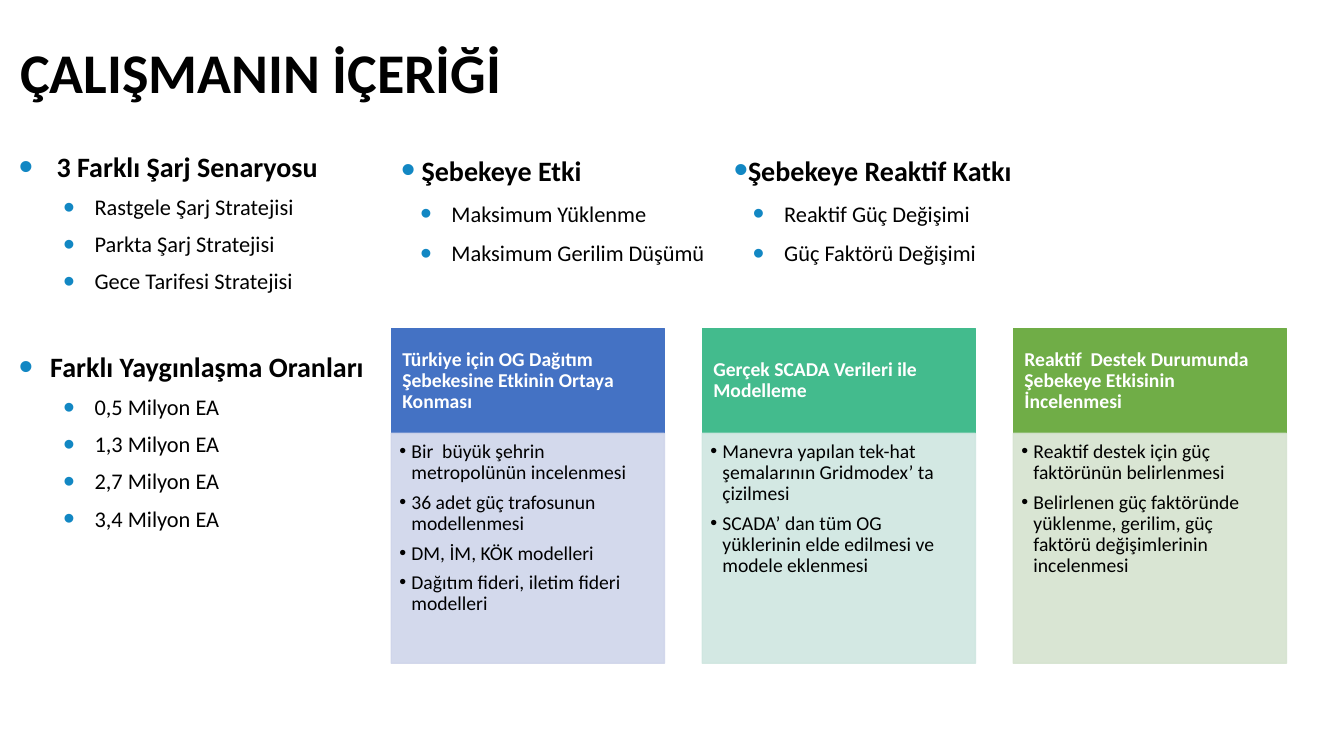
from lxml import etree
from pptx import Presentation
from pptx import util as u
from pptx.dml import color
from pptx.enum import shapes, text
from pptx.oxml import ns


def hue(code):
    return color.RGBColor.from_string(code)


def write(box, rows, ins=(0.1, 0.05, 0.1, 0.05), ink="000000", head=20, sub=16, lead=0.9,
          dot=None, scale=100, tabs=(0, 0), hang=0, rise=0.2, after=6, gap=0, mid=False):
    frame = box.text_frame
    frame.word_wrap = True
    frame.auto_size = text.MSO_AUTO_SIZE.NONE
    frame.vertical_anchor = text.MSO_ANCHOR.MIDDLE if mid else text.MSO_ANCHOR.TOP
    frame.margin_left, frame.margin_top, frame.margin_right, frame.margin_bottom = map(u.Inches, ins)
    for n, (level, words) in enumerate(rows):
        para = frame.paragraphs[0] if n == 0 else frame.add_paragraph()
        size = sub if level else head
        para.level = level
        para.alignment = text.PP_ALIGN.LEFT
        para.line_spacing = lead
        para.space_before = u.Pt(0 if n == 0 else size * rise + (0 if level else gap))
        para.space_after = u.Pt(after)
        if dot:
            props = para._p.get_or_add_pPr()
            props.set("marL", str(u.Inches(tabs[level])))
            props.set("indent", str(u.Inches(-hang)))
            tint = etree.SubElement(props, ns.qn("a:buClr"))
            etree.SubElement(tint, ns.qn("a:srgbClr"), val=dot)
            etree.SubElement(props, ns.qn("a:buSzPct"), val=str(scale * 1000))
            etree.SubElement(props, ns.qn("a:buFont"), typeface="Arial")
            etree.SubElement(props, ns.qn("a:buChar"), char="•")
        run = para.add_run()
        run.text = words
        run.font.name = "Calibri"
        run.font.size = u.Pt(size)
        run.font.bold = level == 0
        run.font.color.rgb = hue(ink)


deck = Presentation()
deck.slide_width, deck.slide_height = u.Inches(13.33), u.Inches(7.5)
slide = deck.slides.add_slide(deck.slide_layouts[5])

LEFT, STEP, WIDE = 3.88, 3.085, 2.71
TOP, HIGH, DEEP = 3.26, 1.04, 2.28

title = slide.shapes.title
title.left, title.top, title.width, title.height = map(u.Inches, (0.1, 0.02, 11.5, 1.45))
write(title, [(0, "ÇALIŞMANIN İÇERİĞİ")], head=40, after=0, mid=True)

lists = [
    (0.09, 3.64, 4.27, 0.9, (0.31, 0.75), [
        (0, " 3 Farklı Şarj Senaryosu"),
        (1, "Rastgele Şarj Stratejisi"),
        (1, "Parkta Şarj Stratejisi"),
        (1, "Gece Tarifesi Stratejisi"),
        (0, "Farklı Yaygınlaşma Oranları"),
        (1, "0,5 Milyon EA"),
        (1, "1,3 Milyon EA"),
        (1, "2,7 Milyon EA"),
        (1, "3,4 Milyon EA")]),
    (LEFT, 3.97, 1.25, 1, (0.06, 0.5), [
        (0, " Şebekeye Etki"),
        (1, "Maksimum Yüklenme"),
        (1, "Maksimum Gerilim Düşümü")]),
    (7.18, 3.97, 1.25, 1, (0.06, 0.5), [
        (0, "Şebekeye Reaktif Katkı"),
        (1, "Reaktif Güç Değişimi"),
        (1, "Güç Faktörü Değişimi")]),
]
for x, wide, high, lead, tabs, rows in lists:
    box = slide.shapes.add_textbox(*map(u.Inches, (x, 1.47, wide, high)))
    write(box, rows, lead=lead, tabs=tabs, hang=0.31, dot="1287C3", scale=145, gap=32)

cards = [
    ("4472C4", "CFD5EA", "Türkiye için OG Dağıtım Şebekesine Etkinin Ortaya Konması", [
        "Bir  büyük şehrin metropolünün incelenmesi",
        "36 adet güç trafosunun modellenmesi",
        "DM, İM, KÖK modelleri",
        "Dağıtım fideri, iletim fideri modelleri"]),
    ("43BB8D", "CFE6E0", "Gerçek SCADA Verileri ile Modelleme", [
        "Manevra yapılan tek-hat şemalarının Gridmodex’ ta çizilmesi",
        "SCADA’ dan tüm OG yüklerinin elde edilmesi ve modele eklenmesi"]),
    ("70AD47", "D5E3CF", "Reaktif  Destek Durumunda Şebekeye Etkisinin İncelenmesi", [
        "Reaktif destek için güç faktörünün belirlenmesi",
        "Belirlenen güç faktöründe yüklenme, gerilim, güç faktörü değişimlerinin incelenmesi"]),
]
for col, (dark, pale, name, points) in enumerate(cards):
    pair = []
    for y, high, fill in ((TOP, HIGH, dark), (TOP + HIGH, DEEP, pale)):
        spot = map(u.Inches, (LEFT + col * STEP, y, WIDE, high))
        rect = slide.shapes.add_shape(shapes.MSO_SHAPE.RECTANGLE, *spot)
        rect.shadow.inherit = False
        rect.fill.solid()
        rect.fill.fore_color.rgb = hue(fill)
        rect.line.color.rgb = hue(fill)
        rect.line.width = u.Pt(1)
        pair.append(rect)
    cap, body = pair
    for tone in body._element.spPr.iter(ns.qn("a:srgbClr")):
        etree.SubElement(tone, ns.qn("a:alpha"), val="90000")
    write(cap, [(0, name)], ins=(0.11, 0.06, 0.11, 0.06), ink="FFFFFF", head=14, after=0, mid=True)
    write(body, [(1, point) for point in points], ins=(0.08, 0.08, 0.11, 0.12), sub=14,
          dot="000000", tabs=(0, 0.12), hang=0.12, rise=0)

deck.save("out.pptx")
